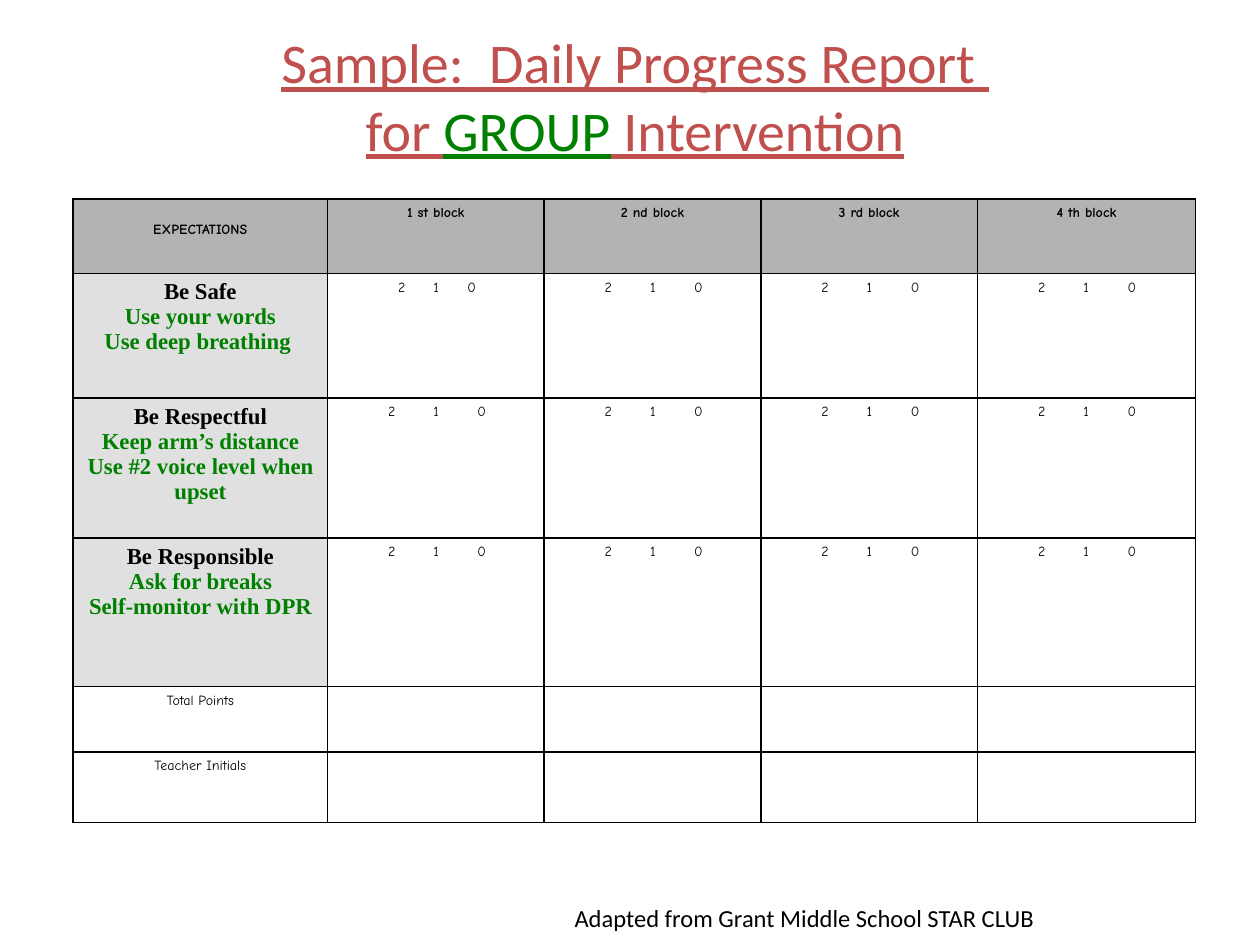
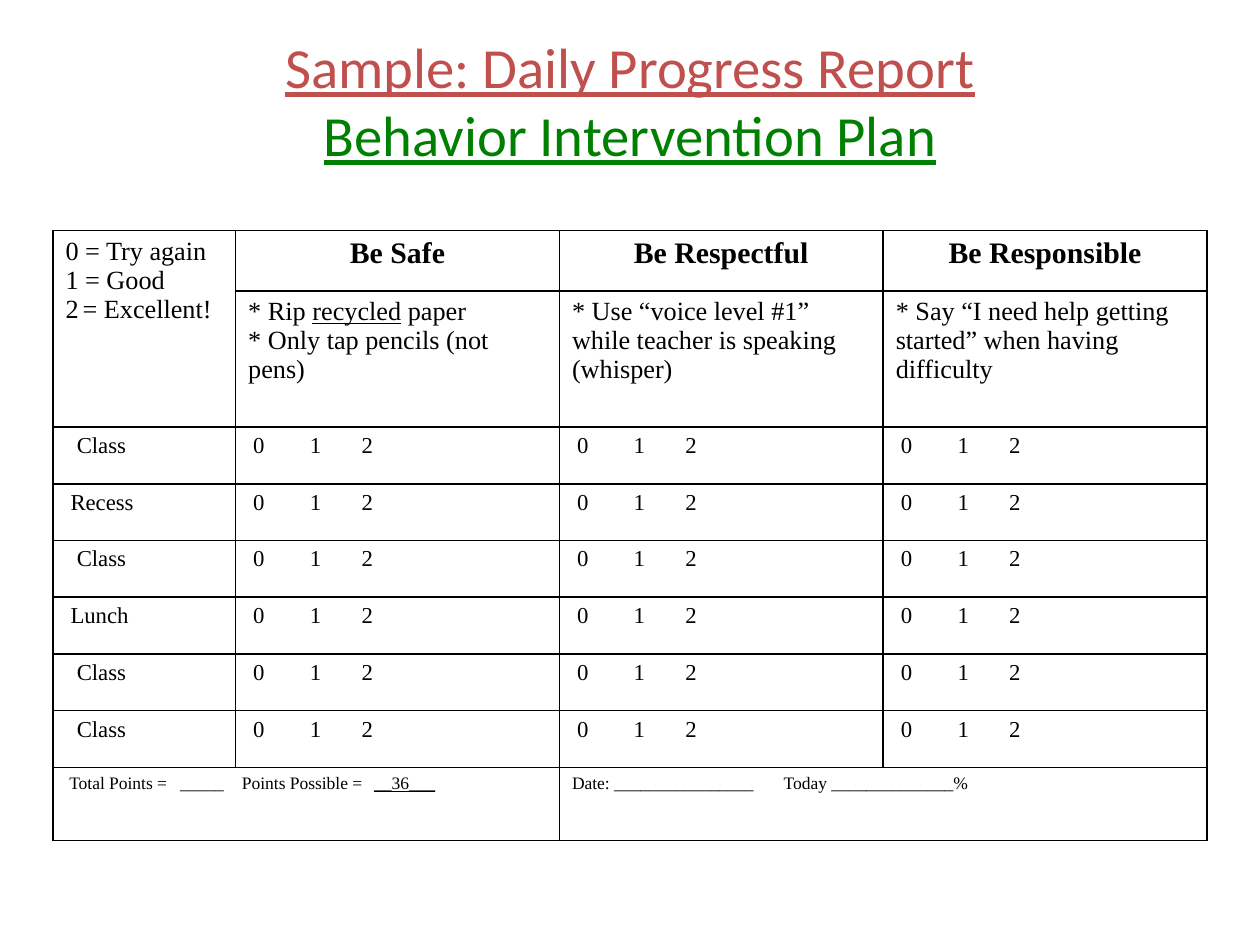
from lxml.etree import SubElement
from pptx import Presentation
from pptx.dml.color import RGBColor
from pptx.enum.text import MSO_ANCHOR, MSO_AUTO_SIZE, PP_ALIGN
from pptx.oxml.ns import qn
from pptx.util import Inches, Pt

COLORS = {
    "black": "000000",
    "red": "C0504D",
    "green": "008000",
    "header": "B3B3B3",
    "expectation": "E0E0E0",
}
SANS, SERIF, COMIC = "Calibri", "Times New Roman", "Comic Neue"
GREEN = {"color": "green"}
UNDERLINED = {"underline": True}


def add_tab_stops(para, stops):
    tab_list = SubElement(para._p.get_or_add_pPr(), qn("a:tabLst"))
    for stop in stops:
        SubElement(tab_list, qn("a:tab"), pos=str(Inches(stop)), algn="l")


def write(frame, lines, size, font, color="black", bold=False, underline=False,
          align=PP_ALIGN.LEFT, tabs=()):
    """Fill a text frame; a line is a string or a list of (text, overrides)."""
    base = {"size": size, "font": font, "color": color, "bold": bold, "underline": underline}
    for index, line in enumerate(lines):
        para = frame.paragraphs[0] if index == 0 else frame.add_paragraph()
        para.alignment = align
        if tabs:
            add_tab_stops(para, tabs)
        for text, overrides in [(line, {})] if isinstance(line, str) else line:
            style = base | overrides
            span = para.add_run()
            span.text = text
            span.font.size = Pt(style["size"])
            span.font.name = style["font"]
            span.font.bold = style["bold"]
            span.font.underline = style["underline"]
            span.font.color.rgb = RGBColor.from_string(COLORS[style["color"]])


class ReportDeck:
    """Holds the deck, its shared style and the current slide."""

    def __init__(self):
        self.deck = Presentation()
        self.deck.slide_width, self.deck.slide_height = Inches(10), Inches(7.5)
        self.page = None

    def add_page(self):
        self.page = self.deck.slides.add_slide(self.deck.slide_layouts[5])

    def title(self, lines, left, top, width, height, size=32):
        box = self.page.shapes.title
        box.left, box.top = Inches(left), Inches(top)
        box.width, box.height = Inches(width), Inches(height)
        frame = box.text_frame
        frame.auto_size = MSO_AUTO_SIZE.NONE
        frame.vertical_anchor = MSO_ANCHOR.MIDDLE
        write(frame, lines, size, SANS, "red", underline=True, align=PP_ALIGN.CENTER)

    def table(self, left, top, columns, rows):
        frame = self.page.shapes.add_table(
            len(rows), len(columns), Inches(left), Inches(top),
            Inches(sum(columns)), Inches(sum(rows)))
        table = frame.table
        table.first_row = table.horz_banding = False
        for column, width in zip(table.columns, columns):
            column.width = Inches(width)
        for row, height in zip(table.rows, rows):
            row.height = Inches(height)
        for cell in table.iter_cells():
            self.border(cell)
            cell.fill.background()
        return table

    def border(self, cell):
        properties = cell._tc.get_or_add_tcPr()
        for side in ("lnL", "lnR", "lnT", "lnB"):
            line = SubElement(properties, qn(f"a:{side}"), w=str(Pt(1)))
            fill = SubElement(line, qn("a:solidFill"))
            SubElement(fill, qn("a:srgbClr"), val=COLORS["black"])

    def cell(self, cell, lines, size, font, fill=None, left=0.1, top=0.05, **text_format):
        cell.margin_left, cell.margin_top = Inches(left), Inches(top)
        if fill:
            cell.fill.solid()
            cell.fill.fore_color.rgb = RGBColor.from_string(COLORS[fill])
        write(cell.text_frame, lines, size, font, **text_format)

    def credit(self, text):
        box = self.page.shapes.add_textbox(Inches(0.17), Inches(6.5), Inches(9.94), Inches(1.4))
        frame = box.text_frame
        frame.word_wrap = True
        frame.margin_left, frame.margin_top = Inches(4.39), Inches(0.67)
        write(frame, [text], 14, SANS)


def add_group_report(report):
    report.add_page()
    report.title(
        ["Sample:  Daily Progress Report ",
         [("for ", {}), ("GROUP", GREEN), (" Intervention", {})]],
        0.75, 0.17, 8.58, 1.17)
    table = report.table(0.58, 1.58, [2.02, 1.72, 1.72, 1.72, 1.73],
                         [0.59, 0.99, 1.11, 1.18, 0.52, 0.56])
    centered = {"align": PP_ALIGN.CENTER}

    report.cell(table.cell(0, 0), ["EXPECTATIONS"], 8, COMIC, "header",
                top=0.18, bold=True, **centered)
    for column, block in enumerate(["1 st", "2 nd", "3 rd", "4 th"], 1):
        report.cell(table.cell(0, column), [f"{block} block"], 8, COMIC, "header",
                    bold=True, **centered)

    expectations = {
        "Be Safe": ["Use your words", "Use deep breathing "],
        "Be Respectful": ["Keep arm’s distance", "Use #2 voice level when upset"],
        "Be Responsible": ["Ask for breaks", "Self-monitor with DPR"],
    }
    for row, (name, actions) in enumerate(expectations.items(), 1):
        lines = [name] + [[(action, GREEN)] for action in actions]
        report.cell(table.cell(row, 0), lines, 13, SERIF, "expectation",
                    bold=True, **centered)
        for column in range(1, 5):
            narrow = row == column == 1
            report.cell(table.cell(row, column), ["2\t1\t0"], 8, COMIC,
                        left=0.56 if narrow else 0.48,
                        tabs=(0.28, 0.55) if narrow else (0.36, 0.71))

    for row, label in enumerate(["Total Points", "Teacher Initials"], 4):
        report.cell(table.cell(row, 0), [label], 8, COMIC, **centered)
    report.credit("Adapted from Grant Middle School STAR CLUB")


def add_behavior_plan(report):
    report.add_page()
    report.title(["Sample: Daily Progress Report", [("Behavior Intervention Plan", GREEN)]],
                 0.5, 0.17, 9, 1.25, size=32.4)
    periods = ["Class", "Recess", "Class", "Lunch", "Class", "Class"]
    table = report.table(0.42, 1.83, [1.45] + [2.57] * 3,
                         [0.48, 1.08] + [0.45] * len(periods) + [0.58])
    last = len(periods) + 2
    table.cell(0, 0).merge(table.cell(1, 0))
    table.cell(last, 0).merge(table.cell(last, 1))
    table.cell(last, 2).merge(table.cell(last, 3))

    report.cell(table.cell(0, 0),
                ["0 = Try again", "1 = Good",
                 [("2", {}), (" ", {"size": 9}), ("= Excellent!", {})]],
                15, SERIF)
    goals = {
        "Be Safe": [[("* Rip ", {}), ("recycled", UNDERLINED), (" paper", {})],
                    "* Only tap pencils (not pens)"],
        "Be Respectful": ["* Use “voice level #1” while teacher is speaking (whisper)"],
        "Be Responsible": ["* Say “I need help getting started” when having difficulty"],
    }
    for column, (name, lines) in enumerate(goals.items(), 1):
        report.cell(table.cell(0, column), [name], 17, SERIF, bold=True, align=PP_ALIGN.CENTER)
        report.cell(table.cell(1, column), lines, 15, SERIF)

    for row, period in enumerate(periods, 2):
        report.cell(table.cell(row, 0), [period], 13, SERIF,
                    left=0.19 if period == "Class" else 0.14)
        for column in range(1, 4):
            report.cell(table.cell(row, column), ["0\t1\t2"], 13, SERIF,
                        left=0.14, tabs=(0.45, 0.86))

    points = [("Total Points =\t_____\tPoints Possible =\t", {}),
              ("__36___\t", UNDERLINED), (" ", {}), ("\t", UNDERLINED)]
    report.cell(table.cell(last, 0), [points], 10, SERIF, left=0.13,
                tabs=(0.88, 1.37, 2.42, 3.18, 3.77))
    report.cell(table.cell(last, 2), ["Date: ________________\tToday ______________%"],
                10, SERIF, tabs=(1.68,))


def main():
    report = ReportDeck()
    add_group_report(report)
    add_behavior_plan(report)
    report.deck.save("out.pptx")


if __name__ == "__main__":
    main()
